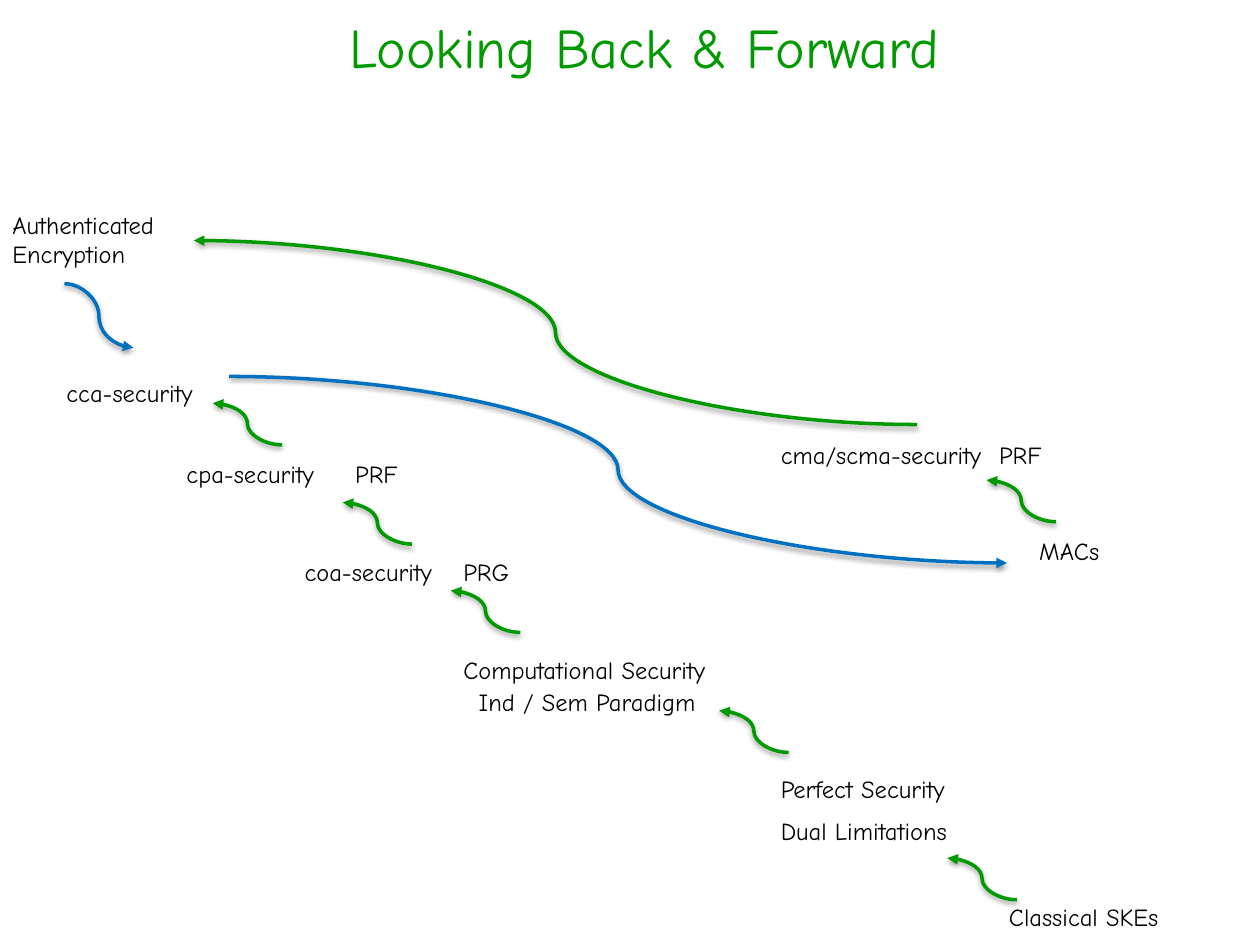
from lxml import etree
from pptx import Presentation
from pptx.dml.color import RGBColor
from pptx.enum.shapes import MSO_CONNECTOR
from pptx.enum.text import MSO_ANCHOR, MSO_AUTO_SIZE, PP_ALIGN
from pptx.oxml import parse_xml
from pptx.oxml.ns import nsdecls, qn
from pptx.util import Cm, Pt

CURVE = MSO_CONNECTOR.CURVE
TOP = MSO_ANCHOR.TOP
NO_FIT, GROW = MSO_AUTO_SIZE.NONE, MSO_AUTO_SIZE.SHAPE_TO_FIT_TEXT
LEFT, CENTER = PP_ALIGN.LEFT, PP_ALIGN.CENTER

COLORS = {"green": "009900", "blue": "0070C0", "black": "000000"}
TITLE_ONLY = 5
LINE_HEIGHT = 0.86
STEP_WIDTH, STEP_HEIGHT = 1.4, 0.84

LABELS = [
    ("Perfect Security", 15.49, 15.47, 5.21),
    ("Computational Security", 9.09, 13.08, 7.19),
    ("Ind / Sem Paradigm", 9.4, 13.72, 6.5),
    ("coa-security", 5.89, 11.1, 3.99),
    ("PRG", 9.09, 11.1, 2.01),
    ("cpa-security", 3.51, 9.12, 3.99),
    ("PRF", 6.91, 9.12, 2.01),
    ("cca-security", 1.09, 7.49, 4.39),
    ("Classical SKEs", 20.09, 18.06, 5.21),
    ("Dual Limitations", 15.49, 16.33, 5.41),
    ("MACs", 20.7, 10.69, 2.39),
    ("cma/scma-security", 15.49, 8.74, 4.8),
    ("PRF", 19.89, 8.74, 2.01),
]

STEP_TIPS = [(19.1, 17.3), (14.5, 14.33), (9.09, 11.91),
             (6.91, 10.13), (4.29, 8.13), (19.89, 9.68)]

LONG_ARROWS = [
    ((4.62, 7.59), (20.3, 11.35), "blue"),
    ((18.49, 8.56), (3.91, 4.85), "green"),
    ((1.3, 5.72), (2.69, 7.01), "blue"),
]


class SlideBuilder:
    font = "Comic Neue"
    title_size = 32
    label_size = 14
    line_width = 2

    def __init__(self, page):
        self.page = page

    def fill_text(self, box, text, size, color, align, fit):
        frame = box.text_frame
        frame.word_wrap = True
        frame.auto_size = fit
        frame.vertical_anchor = TOP
        para = frame.paragraphs[0]
        para.alignment = align
        span = para.add_run()
        span.text = text
        span.font.name = self.font
        span.font.size = Pt(size)
        span.font.color.rgb = RGBColor.from_string(COLORS[color])

    def title(self, text, left, top, width, height):
        box = self.page.shapes.title
        box.left, box.top = Cm(left), Cm(top)
        box.width, box.height = Cm(width), Cm(height)
        self.fill_text(box, text, self.title_size, "green", CENTER, NO_FIT)

    def label(self, text, left, top, width, height=LINE_HEIGHT):
        box = self.page.shapes.add_textbox(Cm(left), Cm(top), Cm(width), Cm(height))
        self.fill_text(box, text, self.label_size, "black", LEFT, GROW)

    def arrow(self, start, end, color):
        points = [Cm(value) for value in (*start, *end)]
        connector = self.page.shapes.add_connector(CURVE, *points)
        connector.line.color.rgb = RGBColor.from_string(COLORS[color])
        connector.line.width = Pt(self.line_width)
        properties = connector._element.spPr
        etree.SubElement(properties.find(qn("a:ln")), qn("a:tailEnd"), type="triangle")
        properties.append(parse_xml(
            f'<a:effectLst {nsdecls("a")}>'
            '<a:outerShdw blurRad="40000" dist="20000" dir="5400000" rotWithShape="0">'
            f'<a:srgbClr val="{COLORS["black"]}"><a:alpha val="38000"/></a:srgbClr>'
            '</a:outerShdw></a:effectLst>'))


def main():
    deck = Presentation()
    deck.slide_width, deck.slide_height = Cm(25.4), Cm(19.05)
    builder = SlideBuilder(deck.slides.add_slide(deck.slide_layouts[TITLE_ONLY]))

    builder.title("Looking Back & Forward", -0.3, 0.13, 26.59, 1.4)
    for label in LABELS:
        builder.label(*label)
    builder.label("Authenticated Encryption", 0, 4.11, 4.39, 1.45)
    for left, top in STEP_TIPS:
        builder.arrow((left + STEP_WIDTH, top + STEP_HEIGHT), (left, top), "green")
    for start, end, color in LONG_ARROWS:
        builder.arrow(start, end, color)

    deck.save("out.pptx")


if __name__ == "__main__":
    main()
